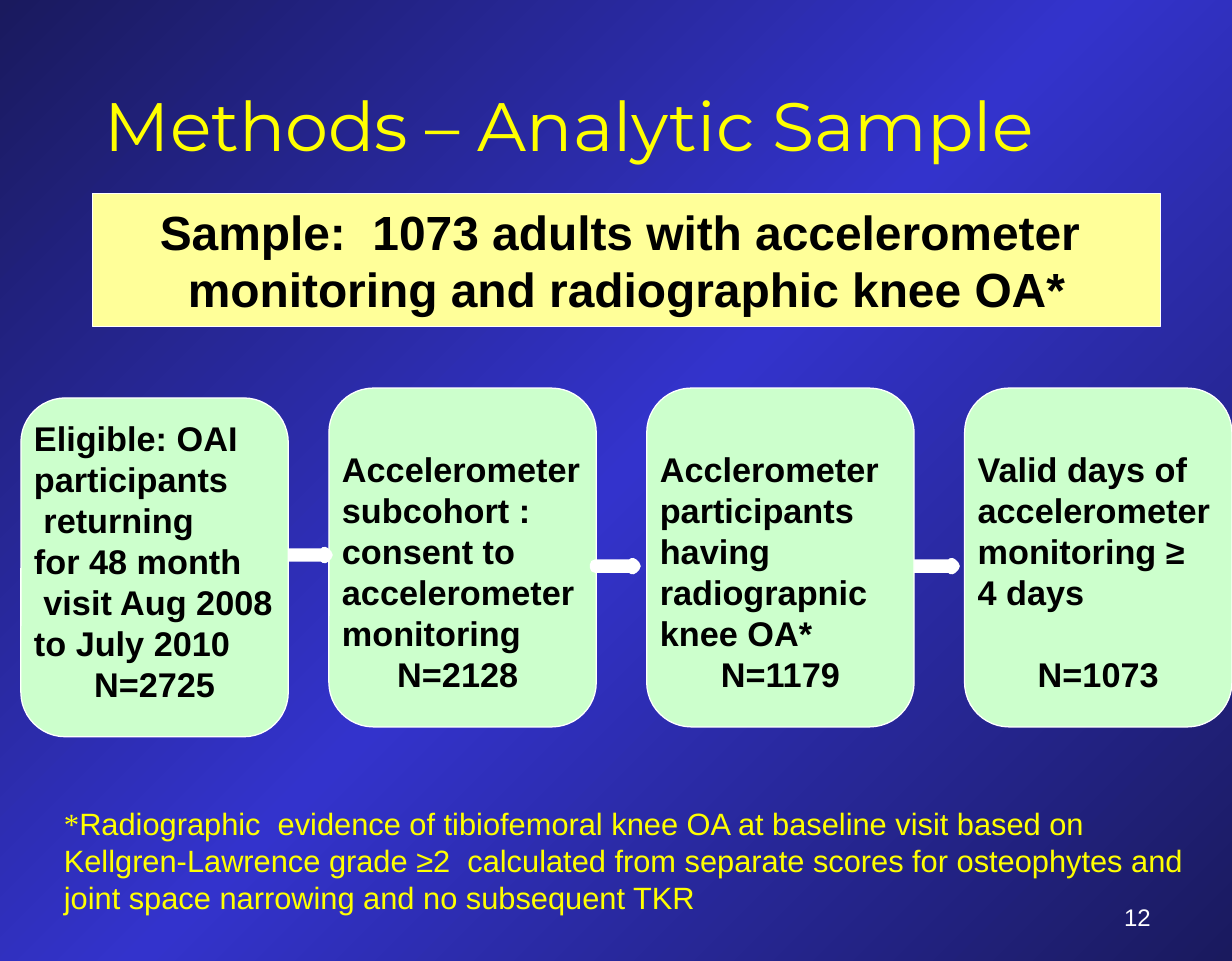
from lxml import etree
from pptx import Presentation
from pptx.dml.color import RGBColor
from pptx.enum import shapes, text
from pptx.oxml import ns
from pptx.util import Inches, Pt

YELLOW = RGBColor(0xFF, 0xFF, 0x00)
PALE_YELLOW = RGBColor(0xFF, 0xFF, 0x99)
PALE_GREEN = RGBColor(0xCC, 0xFF, 0xCC)
ORANGE = RGBColor(0xFF, 0x66, 0x00)
WHITE = RGBColor(0xFF, 0xFF, 0xFF)
BLACK = RGBColor(0x00, 0x00, 0x00)
NAVY = RGBColor(0x1A, 0x1A, 0x5E)
BLUE = RGBColor(0x33, 0x33, 0xCC)

LEFT, CENTER, RIGHT = (text.PP_ALIGN.LEFT, text.PP_ALIGN.CENTER,
                       text.PP_ALIGN.RIGHT)
TOP, MIDDLE, BOTTOM = (text.MSO_ANCHOR.TOP, text.MSO_ANCHOR.MIDDLE,
                       text.MSO_ANCHOR.BOTTOM)

STEP_W, STEP_H = 2.17, 2.75
LINE_H = 0.33  # one line of 20 pt text

# left, top, blank lines above, text lines, count, points above the count
STEPS = [
    (0.17, 3.23, 0, ["Eligible: OAI", "participants", " returning",
                     "for 48 month", " visit Aug 2008", "to July 2010"],
     "N=2725", 0),
    (2.67, 3.15, 1, ["Accelerometer", "subcohort :", "consent to",
                     "accelerometer", "monitoring"], "N=2128 ", 0),
    (5.25, 3.15, 1, ["Acclerometer", "participants", "having",
                     "radiograpnic", "knee OA*"], "N=1179", 0),
    (7.83, 3.15, 1, ["Valid days of", "accelerometer", "monitoring ≥",
                     "4 days"], "N=1073", 24),
]
ARROWS = [(2.33, 4.48), (4.83, 4.57), (7.42, 4.57)]


def box(left, top, width, height):
    return [Inches(v) for v in (left, top, width, height)]


def add_text(p, content, size=20, font="Arial", color=BLACK, bold=False,
             align=LEFT, before=0):
    p.alignment = align
    p.space_before = Pt(before)
    r = p.add_run()
    r.text = content
    r.font.size, r.font.name, r.font.bold = Pt(size), font, bold
    r.font.color.rgb = color


def set_frame(tf, anchor=TOP, wrap=True):
    tf.vertical_anchor = anchor
    tf.word_wrap = wrap
    tf.auto_size = text.MSO_AUTO_SIZE.NONE
    return tf


def add_block(s, kind, place, fill, line_width=0.75):
    sp = s.shapes.add_shape(kind, *place)
    sp.shadow.inherit = False
    sp.fill.solid()
    sp.fill.fore_color.rgb = fill
    sp.line.color.rgb = WHITE
    sp.line.width = Pt(line_width)
    return sp


def set_background(s):
    fill = s.background.fill
    fill.gradient()
    grad = s.background._cSld.find(".//" + ns.qn("a:gradFill"))
    for child in list(grad):
        grad.remove(child)
    stops = etree.SubElement(grad, ns.qn("a:gsLst"))
    for pos, color in ((0, NAVY), (50, BLUE), (100, NAVY)):
        gs = etree.SubElement(stops, ns.qn("a:gs"), pos=str(pos * 1000))
        etree.SubElement(gs, ns.qn("a:srgbClr"), val=str(color))
    etree.SubElement(grad, ns.qn("a:lin"), ang=str(45 * 60000), scaled="1")


def add_title(s, place):
    sp = s.shapes.title
    sp.left, sp.top, sp.width, sp.height = place
    tf = set_frame(sp.text_frame, BOTTOM)
    add_text(tf.paragraphs[0], "Methods – Analytic Sample", size=40,
             font="Montserrat", color=YELLOW)


def add_banner(s, place):
    sp = add_block(s, shapes.MSO_SHAPE.RECTANGLE, place, PALE_YELLOW)
    tf = set_frame(sp.text_frame, MIDDLE, wrap=False)
    form = dict(size=28, bold=True, align=CENTER)
    add_text(tf.paragraphs[0], "Sample:  1073 adults with accelerometer ",
             **form)
    add_text(tf.add_paragraph(), "monitoring and radiographic knee OA*",
             **form)


def add_step(s, place, blank, lines, count, gap):
    sp = add_block(s, shapes.MSO_SHAPE.ROUNDED_RECTANGLE, place, PALE_GREEN)
    tf = set_frame(sp.text_frame, wrap=False)
    tf.margin_left = tf.margin_right = 0
    tf.margin_top = Inches(0.05 + blank * LINE_H)
    for i, line in enumerate(lines):
        p = tf.add_paragraph() if i else tf.paragraphs[0]
        add_text(p, line, bold=True)
    add_text(tf.add_paragraph(), count, bold=True, align=CENTER, before=gap)


def add_flow(s):
    # The arrows lie over the second step and under the others
    def step(i):
        left, top, *content = STEPS[i]
        add_step(s, box(left, top, STEP_W, STEP_H), *content)

    step(1)
    for left, top in ARROWS:
        add_block(s, shapes.MSO_SHAPE.RIGHT_ARROW,
                  box(left, top, 0.33, 0.05), ORANGE, line_width=6)
    for i in (0, 2, 3):
        step(i)


def add_footnote(s, place):
    p = set_frame(s.shapes.add_textbox(*place).text_frame).paragraphs[0]
    add_text(p, "*", size=18, font="Times New Roman", color=YELLOW)
    add_text(p, "Radiographic  evidence of tibiofemoral knee OA at baseline "
             "visit based on Kellgren-Lawrence grade ≥2  calculated from "
             "separate scores for osteophytes and joint space narrowing and "
             "no subsequent TKR", size=18, color=YELLOW)


def add_page_number(s, place):
    tf = set_frame(s.shapes.add_textbox(*place).text_frame, BOTTOM)
    add_text(tf.paragraphs[0], "12", size=14, color=WHITE, align=RIGHT)


def main():
    prs = Presentation()
    prs.slide_width, prs.slide_height = Inches(10), Inches(7.8)
    s = prs.slides.add_slide(prs.slide_layouts[5])
    set_background(s)
    add_title(s, box(0.75, 0.09, 8.5, 1.3))
    add_banner(s, box(0.75, 1.57, 8.67, 1.08))
    add_flow(s)
    add_footnote(s, box(0.42, 6.48, 9.33, 1.01))
    add_page_number(s, box(7.36, 7.09, 2.08, 0.52))
    prs.save("out.pptx")


if __name__ == "__main__":
    main()
